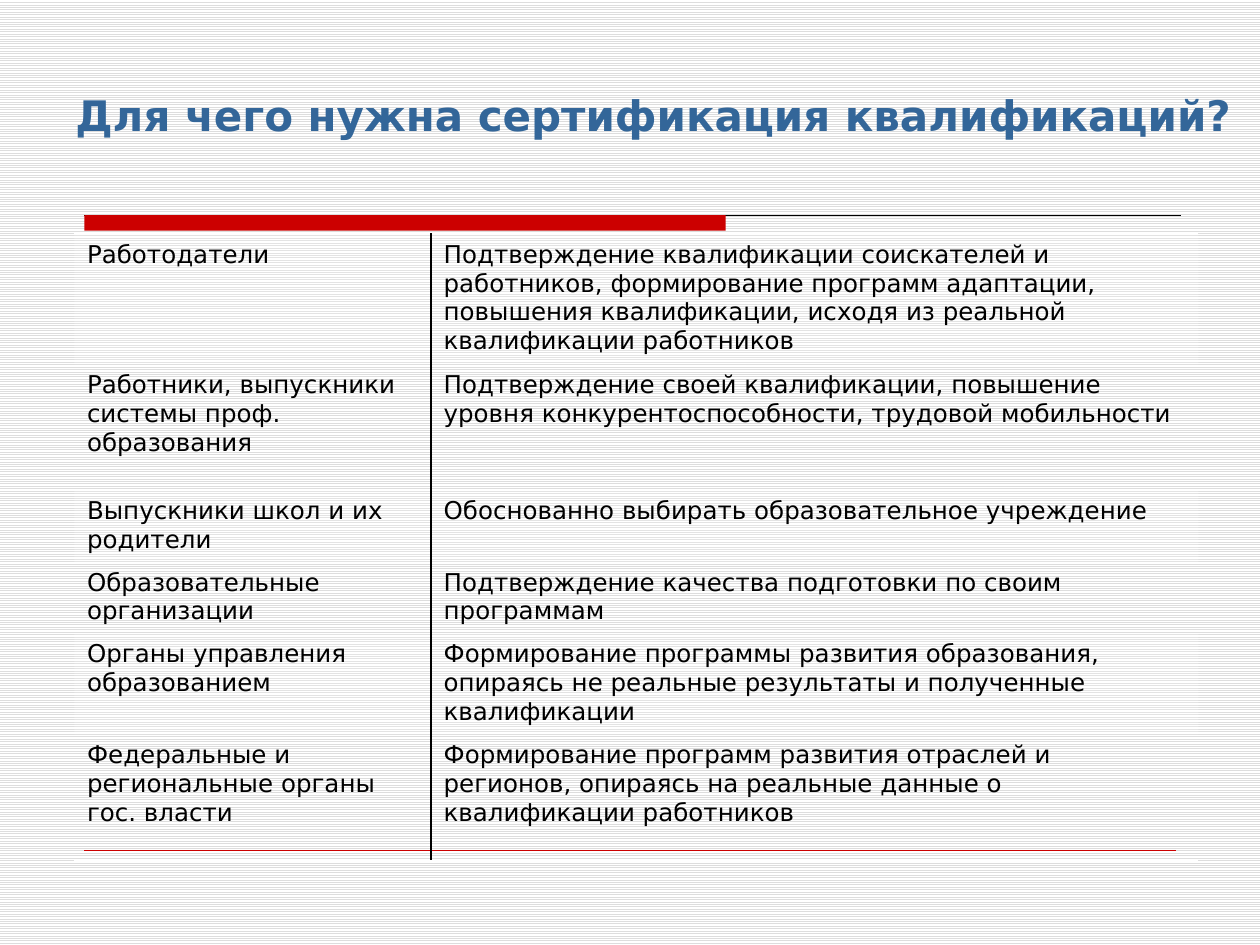
from dataclasses import dataclass

from lxml import etree
from pptx import Presentation
from pptx.dml.color import RGBColor
from pptx.enum import dml, shapes, text
from pptx.oxml import ns
from pptx.util import Cm, Pt

HEADING = "Для чего нужна сертификация квалификаций?"
BENEFITS = [
    ("Работодатели",
     "Подтверждение квалификации соискателей и работников, формирование программ "
     "адаптации, повышения квалификации, исходя из реальной квалификации работников",
     2.57),
    ("Работники, выпускники системы проф. образования",
     "Подтверждение своей квалификации, повышение уровня конкурентоспособности, "
     "трудовой мобильности",
     2.54),
    ("Выпускники школ и их родители",
     "Обоснованно выбирать образовательное учреждение",
     1.4),
    ("Образовательные организации",
     "Подтверждение качества подготовки по своим программам",
     1.4),
    ("Органы управления образованием",
     "Формирование программы развития образования, опираясь не реальные результаты "
     "и полученные квалификации",
     1.98),
    ("Федеральные и региональные органы гос. власти",
     "Формирование программ развития отраслей и регионов, опираясь на реальные данные "
     "о квалификации работников",
     2.54),
]
COLUMN_WIDTHS = (7.19, 15.47)
PLAIN_TABLE = "{2D5ABB26-0587-4C30-8999-92F81FD0307C}"


@dataclass(frozen=True)
class Theme:
    font: str = "DejaVu Sans"
    heading_size: int = 24
    body_size: int = 14
    heading: str = "336699"
    ink: str = "000000"
    accent: str = "CC0000"
    paper: str = "FFFFFF"
    stripe: str = "DDDDDD"
    band_opacity: int = 20


THEME = Theme()


def rgb(value):
    return RGBColor.from_string(value)


def style(paragraph, size, color, bold=False):
    font = paragraph.font
    font.name, font.size, font.bold = THEME.font, Pt(size), bold
    font.color.rgb = rgb(color)


def add_rule(slide, left, right, y, color, width):
    rule = slide.shapes.add_connector(
        shapes.MSO_CONNECTOR.STRAIGHT, Cm(left), Cm(y), Cm(right), Cm(y))
    rule.line.color.rgb = rgb(color)
    rule.line.width = Pt(width)
    etree.SubElement(rule._element.spPr, ns.qn("a:effectLst"))


def set_borders(cell, borders):
    properties = cell._tc.get_or_add_tcPr()
    for position, (side, color) in enumerate(borders):
        border = etree.Element(ns.qn(f"a:ln{side}"), w=str(Pt(1)))
        fill = etree.SubElement(border, ns.qn("a:solidFill"))
        etree.SubElement(fill, ns.qn("a:srgbClr"), val=color)
        properties.insert(position, border)


def set_band(cell, shaded):
    if not shaded:
        cell.fill.background()
        return
    cell.fill.solid()
    cell.fill.fore_color.rgb = rgb(THEME.paper)
    color = cell._tc.tcPr.find(".//" + ns.qn("a:srgbClr"))
    etree.SubElement(color, ns.qn("a:alpha"), val=str(THEME.band_opacity * 1000))


def add_background(slide):
    fill = slide.background.fill
    fill.patterned()
    fill.pattern = dml.MSO_PATTERN.LIGHT_HORIZONTAL
    fill.fore_color.rgb = rgb(THEME.stripe)
    fill.back_color.rgb = rgb(THEME.paper)


def add_heading(slide):
    box = slide.shapes.add_textbox(Cm(1.27), Cm(0), Cm(24.13), Cm(3.94))
    frame = box.text_frame
    frame.word_wrap = True
    frame.vertical_anchor = text.MSO_ANCHOR.BOTTOM
    frame.margin_bottom = Cm(1.12)
    frame.text = HEADING
    style(frame.paragraphs[0], THEME.heading_size, THEME.heading, bold=True)


def add_bar(slide):
    bar = slide.shapes.add_shape(
        shapes.MSO_SHAPE.RECTANGLE, Cm(1.7), Cm(4.34), Cm(12.93), Cm(0.31))
    bar.shadow.inherit = False
    bar.fill.solid()
    bar.fill.fore_color.rgb = rgb(THEME.accent)
    bar.line.fill.background()


def add_benefits(slide):
    heights = [height for _, _, height in BENEFITS]
    table = slide.shapes.add_table(
        len(BENEFITS), len(COLUMN_WIDTHS), Cm(1.5), Cm(4.72),
        Cm(sum(COLUMN_WIDTHS)), Cm(sum(heights))).table
    table.first_row = table.horz_banding = False
    table._tbl.tblPr.find(ns.qn("a:tableStyleId")).text = PLAIN_TABLE
    for column, width in zip(table.columns, COLUMN_WIDTHS):
        column.width = Cm(width)
    last = len(BENEFITS) - 1
    for row, (audience, benefit, height) in enumerate(BENEFITS):
        table.rows[row].height = Cm(height)
        for column, words in enumerate((audience, benefit)):
            cell = table.cell(row, column)
            cell.text = words
            style(cell.text_frame.paragraphs[0], THEME.body_size, THEME.ink)
            set_band(cell, row % 2 == 0)
            borders = [("L" if column else "R", THEME.ink)]
            if row == 0:
                borders.append(("T", THEME.paper))
            if row == last:
                borders.append(("B", THEME.paper))
            set_borders(cell, borders)


def main():
    deck = Presentation()
    deck.slide_width, deck.slide_height = Cm(25.4), Cm(19.05)
    slide = deck.slides.add_slide(deck.slide_layouts[6])
    add_background(slide)
    add_rule(slide, 1.7, 23.8, 4.34, THEME.ink, 0.75)
    add_bar(slide)
    add_rule(slide, 1.7, 23.7, 17.15, THEME.accent, 0.25)
    add_heading(slide)
    add_benefits(slide)
    deck.save("out.pptx")


if __name__ == "__main__":
    main()
